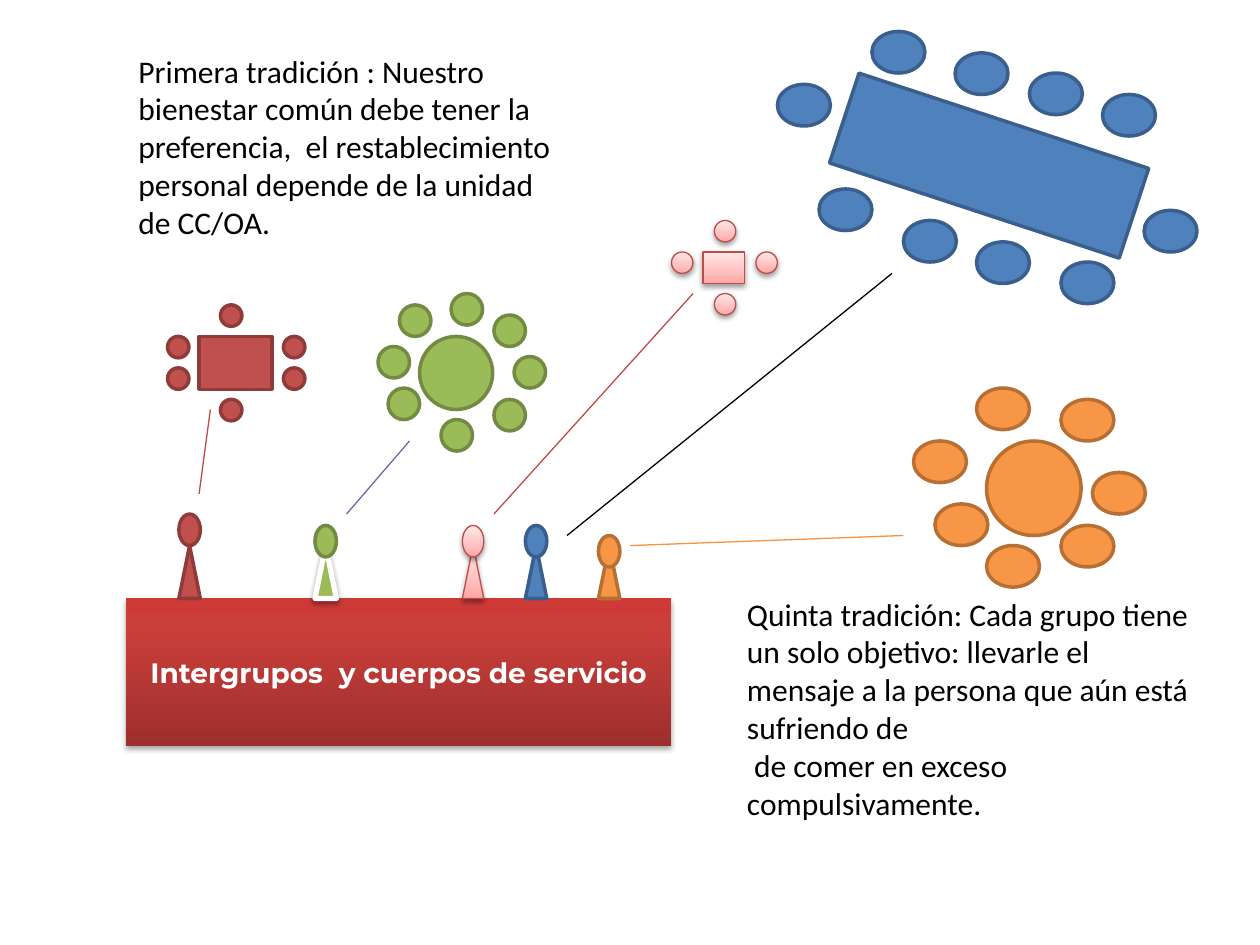
from lxml import etree
from pptx import Presentation
from pptx.dml.color import RGBColor
from pptx.enum.shapes import MSO_CONNECTOR, MSO_SHAPE
from pptx.enum.text import MSO_ANCHOR, MSO_AUTO_SIZE, PP_ALIGN
from pptx.oxml.ns import qn
from pptx.util import Inches, Pt

RECTANGLE = MSO_SHAPE.RECTANGLE
ELLIPSE = MSO_SHAPE.OVAL
TRIANGLE = MSO_SHAPE.ISOSCELES_TRIANGLE
STRAIGHT = MSO_CONNECTOR.STRAIGHT
MIDDLE = MSO_ANCHOR.MIDDLE
GROW = MSO_AUTO_SIZE.SHAPE_TO_FIT_TEXT
CENTER = PP_ALIGN.CENTER

BLUE = {"fill": "4F81BD", "line": "3A5F8C"}
ORANGE = {"fill": "F79646", "line": "B76F34"}
GREEN = {"fill": "9BBB59", "line": "738A42"}
RED = {"fill": "C0504D", "line": "8E3B39"}
PINK = {
    "fill": [(0, "FFA6A5"), (35, "FFC0BF"), (100, "FFE7E7")],
    "line": "BF4C48", "width": 0.75, "shadow": (38, 1.6),
}
GREEN_BODY = {"fill": "9BBB59", "line": "FFFFFF", "width": 3, "shadow": (38, 1.6)}
BANNER = {"fill": [(0, "9C2F2D"), (80, "CB3E3A"), (100, "CE3B37")], "shadow": (35, 1.8)}

TABLES = [
    (RECTANGLE, (6.64, 0.94, 2.42, 0.75), 18.2, BLUE, (0.42, 0.33),
     [(6.92, 0.25), (7.58, 0.42), (8.17, 0.58), (8.75, 0.75), (8.42, 2.08),
      (7.75, 1.92), (7.17, 1.75), (6.5, 1.5), (9.08, 1.67), (6.17, 0.67)]),
    (ELLIPSE, (7.83, 3.5, 0.75, 0.75), 0, ORANGE, (0.42, 0.33),
     [(8.42, 3.17), (7.25, 3.5), (8.42, 4.17), (7.42, 4), (8.67, 3.75),
      (7.83, 4.33), (7.75, 3.08)]),
    (ELLIPSE, (3.33, 2.67, 0.58, 0.58), 0, GREEN, (0.25, 0.25),
     [(3.92, 3.17), (3.58, 2.33), (3.08, 3.08), (3.92, 2.5), (3.17, 2.42),
      (3.5, 3.33), (3, 2.75), (4.08, 2.83)]),
    (RECTANGLE, (1.58, 2.67, 0.58, 0.42), 0, RED, (0.17, 0.17),
     [(1.33, 2.67), (1.75, 2.42), (1.75, 3.17), (2.25, 2.67), (1.33, 2.92),
      (2.25, 2.92)]),
    (RECTANGLE, (5.58, 2, 0.33, 0.25), 0, PINK, (0.17, 0.17),
     [(5.33, 2), (5.67, 1.75), (5.67, 2.33), (6, 2)]),
]

DELEGATES = [
    (1.42, 4.08, RED, RED),
    (2.5, 4.17, GREEN_BODY, GREEN),
    (3.67, 4.17, PINK, PINK),
    (4.17, 4.17, BLUE, BLUE),
    (4.75, 4.25, ORANGE, ORANGE),
]

LINKS = [
    ((1.58, 3.92), (1.67, 3.25), "BF4C48"),
    ((2.75, 4.08), (3.25, 3.5), "7D60A0"),
    ((4.5, 4.25), (7.08, 2.17), "000000"),
    ((5, 4.33), (7.17, 4.25), "F69240"),
    ((3.92, 4.08), (5.5, 2.33), "BF4C48"),
]

FIRST_TRADITION = [
    "Primera tradición : Nuestro bienestar común debe tener la preferencia,  "
    "el restablecimiento personal depende de la unidad de CC/OA.",
]
FIFTH_TRADITION = [
    "Quinta tradición: Cada grupo tiene un solo objetivo: llevarle el mensaje "
    "a la persona que aún está sufriendo de",
    " de comer en exceso compulsivamente.",
]


def color(value):
    return RGBColor.from_string(value)


def write(frame, lines, font="Calibri", size=18, ink="000000", bold=False, align=None):
    frame.word_wrap = True
    for index, line in enumerate(lines):
        para = frame.paragraphs[0] if index == 0 else frame.add_paragraph()
        para.alignment = align
        span = para.add_run()
        span.text = line
        span.font.name = font
        span.font.size = Pt(size)
        span.font.bold = bold
        span.font.color.rgb = color(ink)


class Painter:
    def __init__(self, page, line_width=2, link_width=0.75):
        self.page = page
        self.line_width = line_width
        self.link_width = link_width

    def text(self, place, lines):
        box = self.page.shapes.add_textbox(*map(Inches, place))
        write(box.text_frame, lines)
        box.text_frame.auto_size = GROW

    def shape(self, kind, place, fill, line=None, width=None, shadow=None, turn=0):
        shape = self.page.shapes.add_shape(kind, *map(Inches, place))
        shape.rotation = turn
        shape.shadow.inherit = False
        if isinstance(fill, str):
            shape.fill.solid()
            shape.fill.fore_color.rgb = color(fill)
        else:
            self.gradient(shape, fill)
        if line:
            shape.line.color.rgb = color(line)
            shape.line.width = Pt(width or self.line_width)
        else:
            shape.line.fill.background()
        if shadow:
            self.shadow(shape, *shadow)
        return shape

    def gradient(self, shape, stops):
        shape.fill.gradient()
        shape.fill.gradient_angle = 90
        stop_list = shape.element.spPr.find(".//" + qn("a:gsLst"))
        for stop in list(stop_list):
            stop_list.remove(stop)
        for position, value in stops:
            stop = etree.SubElement(stop_list, qn("a:gs"), pos=str(position * 1000))
            etree.SubElement(stop, qn("a:srgbClr"), val=value)

    def shadow(self, shape, opacity, distance):
        effects = shape.element.spPr.find(qn("a:effectLst"))
        outer = etree.SubElement(
            effects, qn("a:outerShdw"), blurRad=str(Pt(3.1)),
            dist=str(Pt(distance)), dir="5400000", rotWithShape="0")
        tint = etree.SubElement(outer, qn("a:srgbClr"), val="000000")
        etree.SubElement(tint, qn("a:alpha"), val=str(opacity * 1000))

    def link(self, start, end, ink):
        link = self.page.shapes.add_connector(STRAIGHT, *map(Inches, start + end))
        link.line.color.rgb = color(ink)
        link.line.width = Pt(self.link_width)
        etree.SubElement(link.element.spPr, qn("a:effectLst"))

    def table(self, kind, place, turn, paint, seat_size, seats):
        self.shape(kind, place, turn=turn, **paint)
        for seat in seats:
            self.shape(ELLIPSE, seat + seat_size, **paint)

    def delegate(self, left, top, body, head):
        self.shape(TRIANGLE, (left, 4.33, 0.17, 0.42), **body)
        self.shape(ELLIPSE, (left, top, 0.17, 0.25), **head)

    def banner(self, place, label):
        frame = self.shape(RECTANGLE, place, **BANNER).text_frame
        frame.vertical_anchor = MIDDLE
        write(frame, [label], font="Montserrat", size=16, ink="FFFFFF", bold=True, align=CENTER)


def main():
    deck = Presentation()
    deck.slide_width = Inches(10)
    deck.slide_height = Inches(7.5)
    painter = Painter(deck.slides.add_slide(deck.slide_layouts[6]))
    painter.text((1, 0.36, 3.57, 1.62), FIRST_TRADITION)
    painter.text((5.83, 4.67, 3.75, 1.92), FIFTH_TRADITION)
    painter.banner((1, 4.75, 4.33, 1.17), "Intergrupos  y cuerpos de servicio")
    for table in TABLES:
        painter.table(*table)
    for delegate in DELEGATES:
        painter.delegate(*delegate)
    for link in LINKS:
        painter.link(*link)
    deck.save("out.pptx")


if __name__ == "__main__":
    main()
